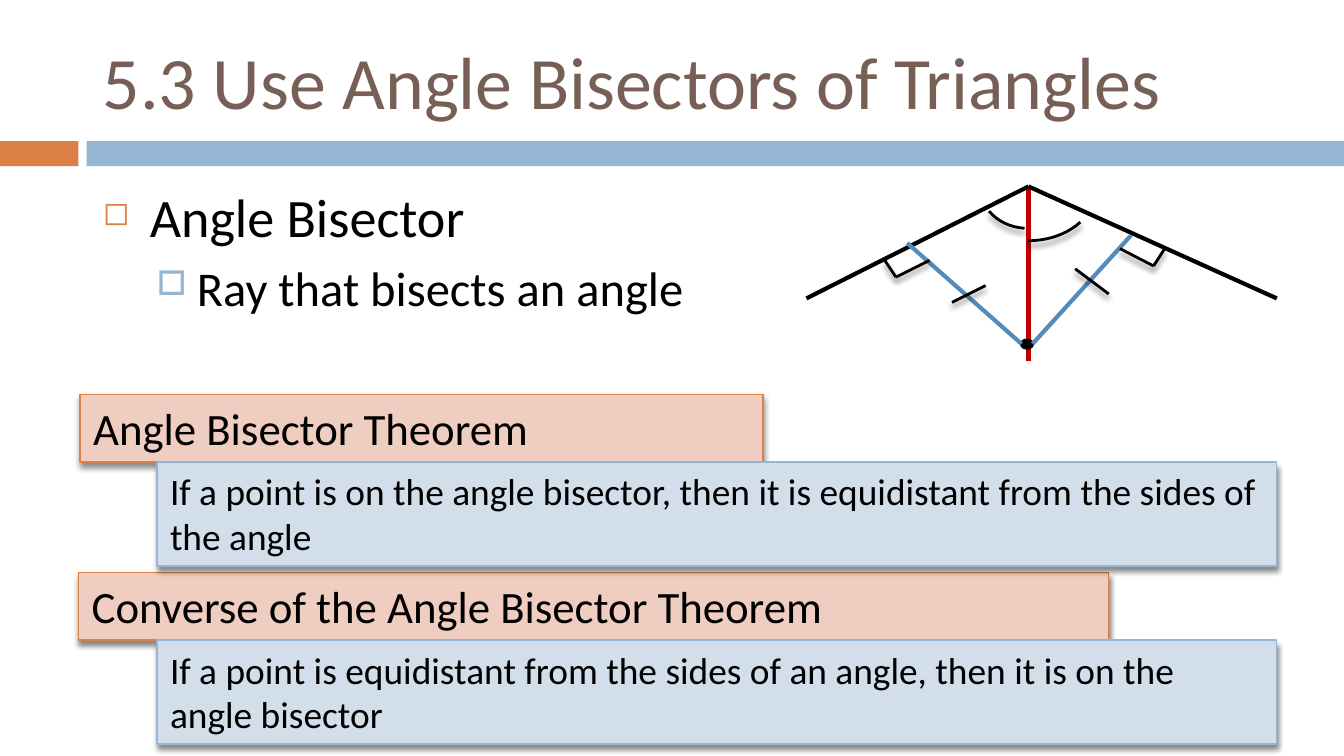
from lxml import etree
from pptx import Presentation
from pptx import util as u
from pptx.dml.color import RGBColor
from pptx.enum import shapes, text
from pptx.oxml.ns import qn

HUES = {
    "brown": "775F55", "orange": "DD8047", "blue": "94B6D2", "peach": "EFCDC1",
    "pale": "D2DEEA", "red": "C00000", "steel": "558BB8", "black": "000000",
}
KIND = shapes.MSO_SHAPE


def grid(n):
    return u.Inches(n / 12)


def hue(name):
    return RGBColor.from_string(HUES[name])


def node(top, tag, **attrs):
    return etree.SubElement(top, qn(tag), {k: str(v) for k, v in attrs.items()})


def shade(item, on):
    effect = node(item._element.spPr, "a:effectLst")
    if on:
        cast = node(effect, "a:outerShdw", blurRad=u.Pt(3), dist=u.Pt(2.4),
                    dir=90 * 60000, algn="ctr", rotWithShape=0)
        tint = node(cast, "a:srgbClr", val=HUES["black"])
        node(tint, "a:alpha", val=45000)


def style(part, size, color):
    for run in part.runs:
        run.font.name = "Calibri"
        run.font.size = u.Pt(size)
        run.font.color.rgb = hue(color)


def shape(slide, kind, box, fill=None, line=None, width=1.5, cast=False):
    item = slide.shapes.add_shape(kind, *map(grid, box))
    if fill:
        item.fill.solid()
        item.fill.fore_color.rgb = hue(fill)
    else:
        item.fill.background()
    if line:
        item.line.color.rgb = hue(line)
        item.line.width = u.Pt(width)
    else:
        item.line.fill.background()
    shade(item, cast)
    return item


def stroke(slide, ends, color="black", width=1.5, cast=False):
    item = slide.shapes.add_connector(shapes.MSO_CONNECTOR.STRAIGHT, *map(grid, ends))
    item.line.color.rgb = hue(color)
    item.line.width = u.Pt(width)
    shade(item, cast)


def panel(slide, box, words, size, fill, line):
    item = shape(slide, KIND.RECTANGLE, box, fill, line, 0.79, True)
    frame = item.text_frame
    frame.text = words
    frame.word_wrap = True
    frame.auto_size = text.MSO_AUTO_SIZE.SHAPE_TO_FIT_TEXT
    frame.vertical_anchor = text.MSO_ANCHOR.TOP
    part = frame.paragraphs[0]
    part.alignment = text.PP_ALIGN.LEFT
    style(part, size, "black")


def theorem(slide, left, top, width, name, rule):
    panel(slide, (left, top, width, 6.06), name, 24, "peach", "orange")
    panel(slide, (14, top + 6.06, 100, 9.29), rule, 20, "pale", "blue")


def field(slide, box, words):
    frame = slide.shapes.add_textbox(*map(grid, box)).text_frame
    frame.word_wrap = True
    frame.text = words
    return frame


def bullet(part, level, left, hang, sign, color, share):
    part.level = level
    props = part._p.get_or_add_pPr()
    props.set("marL", str(u.Inches(left)))
    props.set("indent", str(u.Inches(-hang)))
    node(node(props, "a:buClr"), "a:srgbClr", val=HUES[color])
    node(props, "a:buSzPct", val=share * 1000)
    node(props, "a:buChar", char=sign)


def header(slide):
    shape(slide, KIND.RECTANGLE, (0, 12.6, 7, 2.25), "orange")
    shape(slide, KIND.RECTANGLE, (7.75, 12.6, 112.25, 2.25), "blue")
    frame = field(slide, (8, 2.25, 107, 9.75), "5.3 Use Angle Bisectors of Triangles")
    frame.vertical_anchor = text.MSO_ANCHOR.MIDDLE
    style(frame.paragraphs[0], 39.6, "brown")


def body(slide):
    frame = field(slide, (8, 15.75, 107, 44.25), "Angle Bisector\nRay that bisects an angle")
    looks = (
        (29, 7, (0, 0.35, 0.35, "◻", "orange", 60)),
        (26, 5.5, (1, 0.7, 0.3, "□", "blue", 70)),
    )
    for part, (size, gap, mark) in zip(frame.paragraphs, looks):
        part.space_before = u.Pt(gap)
        bullet(part, *mark)
        style(part, size, "black")


def figure(slide):
    mid, peak = 91.83, 16.65
    stroke(slide, (mid, peak, mid, 32.25), "red", 2.25)
    for side in (72, 114):
        stroke(slide, (side, 26.65, mid, peak), width=2.25)
    arcs = (
        ((85.8, 12.5, 12, 9), 18.76, 54),
        ((87.6, 13.4, 8.4, 7), 57.09, 90.36),
    )
    for box, start, end in arcs:
        arc = shape(slide, KIND.ARC, box, line="black", cast=True)
        arc.adjustments[0] = start
        arc.adjustments[1] = end
    shape(slide, KIND.OVAL, (91.2, 30.35, 1, 0.75), "black", "black")
    for ends in ((92.2, 30.7, 101, 21), (91.2, 30.7, 81, 21.7)):
        stroke(slide, ends, "steel", 2.25)
    ticks = (
        (83, 23.25, 80, 24.75), (80, 24.75, 79, 23.25),
        (100, 22.2, 103, 23.75), (103, 23.75, 104, 22.2),
        (88, 25.5, 85, 27), (96, 24, 99, 26.25),
    )
    for ends in ticks:
        stroke(slide, ends, cast=True)


def main():
    deck = Presentation()
    deck.slide_width = u.Inches(10)
    deck.slide_height = deck.slide_width * 9 // 16
    slide = deck.slides.add_slide(deck.slide_layouts[6])
    header(slide)
    body(slide)
    first, step = 35.2, 15.9
    theorem(slide, 7, first + step, 92, "Converse of the Angle Bisector Theorem",
            "If a point is equidistant from the sides of an angle, "
            "then it is on the angle bisector")
    theorem(slide, 7.15, first, 61, "Angle Bisector Theorem",
            "If a point is on the angle bisector, "
            "then it is equidistant from the sides of the angle")
    figure(slide)
    deck.save("out.pptx")


if __name__ == "__main__":
    main()
